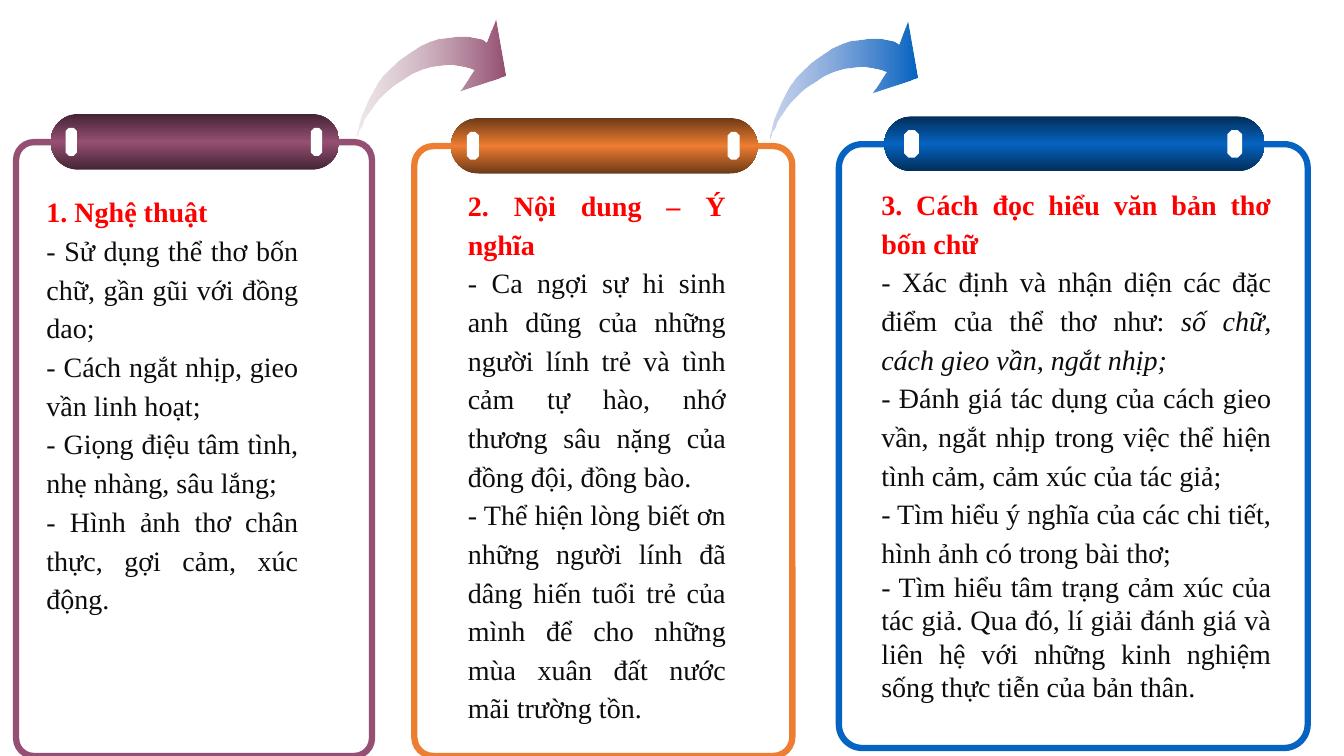
from dataclasses import dataclass

import lxml.etree
import pptx
import pptx.dml.color
import pptx.enum.shapes
import pptx.enum.text
import pptx.oxml.ns
import pptx.util

SHAPE = pptx.enum.shapes.MSO_SHAPE
qn = pptx.oxml.ns.qn


@dataclass(frozen=True)
class Theme:
    font: str = "Times New Roman"
    size: float = 20
    frame_width: float = 4.5
    heading: str = "FF0000"
    body: str = "0D0D0D"
    pin: str = "FFFFFF"
    plum: str = "954F72"
    plum_dark: str = "442434"
    plum_pale: str = "CBB6BF"
    orange: str = "ED7D31"
    orange_dark: str = "6D3A17"
    blue: str = "0563C1"
    blue_dark: str = "022E59"
    blue_pale: str = "5A7DC8"


THEME = Theme()

# Boxes are left, top, width, height in percent: panels and arrows of the slide,
# texts of their panel. Text between asterisks is italic.
PANELS = [
    dict(box=(1.2, 18.8, 26.48, 81.2), color=THEME.plum, dark=THEME.plum_dark,
         holder=1, text_box=(5.67, 6.9, 81.3, 71.59), right=0.27, before=0.1,
         loose=5, lines=[
             "1. Nghệ thuật",
             "- Sử dụng thể thơ bốn chữ, gần gũi với đồng dao;",
             "- Cách ngắt nhịp, gieo vần linh hoạt;",
             "- Giọng điệu tâm tình, nhẹ nhàng, sâu lắng;",
             "- Hình ảnh thơ chân thực, gợi cảm, xúc động."]),
    dict(box=(30.83, 19.33, 28.13, 80.67), color=THEME.orange, dark=THEME.orange_dark,
         holder=2, text_box=(11.47, 5.29, 77.87, 91.24), right=0.26, before=0,
         loose=3, lines=[
             "2. Nội dung – Ý nghĩa",
             "- Ca ngợi sự hi sinh anh dũng của những người lính trẻ và tình cảm "
             "tự hào, nhớ thương sâu nặng của đồng đội, đồng bào.",
             "- Thể hiện lòng biết ơn những người lính đã dâng hiến tuổi trẻ của "
             "mình để cho những mùa xuân đất nước mãi trường tồn."]),
    dict(box=(62.42, 19.07, 34.88, 79.87), color=THEME.blue, dark=THEME.blue_dark,
         holder=3, text_box=(6.88, 5.51, 87.53, 88.81), right=0.1, before=0,
         loose=4, lines=[
             "3. Cách đọc hiểu văn bản thơ bốn chữ",
             "- Xác định và nhận diện các đặc điểm của thể thơ như: "
             "*số chữ, cách gieo vần, ngắt nhịp;*",
             "- Đánh giá tác dụng của cách gieo vần, ngắt nhịp trong việc thể hiện "
             "tình cảm, cảm xúc của tác giả;",
             "- Tìm hiểu ý nghĩa của các chi tiết, hình ảnh có trong bài thơ;",
             "- Tìm hiểu tâm trạng cảm xúc của tác giả. Qua đó, lí giải đánh giá và "
             "liên hệ với những kinh nghiệm sống thực tiễn của bản thân."]),
]

ARROWS = [
    dict(box=(57.31, 2.8, 11.03, 15.47), pale=THEME.blue_pale, color=THEME.blue),
    dict(box=(26.63, 2.53, 11.03, 15.47), pale=THEME.plum_pale, color=THEME.plum),
]

# Arrow outline on a grid of 147 columns and 116 rows
ARROW_GRID = (147, 116)
ARROW_POINTS = [
    (0, 116), (1, 113), (2, 109), (5, 105), (7, 99), (11, 93), (16, 86), (21, 79),
    (28, 72), (35, 66), (44, 60), (54, 54), (63, 50), (73, 47), (81, 46), (88, 45),
    (95, 45), (101, 46), (106, 47), (110, 48), (115, 50), (101, 71), (146, 56),
    (136, 0), (127, 23), (123, 20), (119, 19), (114, 18), (109, 17), (103, 17),
    (96, 17), (89, 18), (80, 19), (72, 22), (63, 26), (53, 32), (43, 39), (34, 47),
    (26, 55), (20, 63), (15, 72), (11, 80), (7, 89), (4, 96), (2, 103), (1, 108),
    (0, 112)]


def rgb(color):
    return pptx.dml.color.RGBColor.from_string(color)


def inside(outer, percent):
    """Return the box that lies at the given percentages of an outer box."""
    x, y, w, h = outer
    px, py, pw, ph = (v / 100 for v in percent)
    return tuple(round(v) for v in (x + px * w, y + py * h, pw * w, ph * h))


def gradient(sp, angle, stops):
    """Fill with stops of position, colour and opacity, all in percent."""
    sp.fill.gradient()
    sp.fill.gradient_angle = angle
    gs_list = sp._element.spPr.find(".//" + qn("a:gsLst"))
    for gs in list(gs_list):
        gs_list.remove(gs)
    for position, color, opacity in stops:
        gs = lxml.etree.SubElement(gs_list, qn("a:gs"), pos=str(position * 1000))
        clr = lxml.etree.SubElement(gs, qn("a:srgbClr"), val=color)
        if opacity < 100:
            lxml.etree.SubElement(clr, qn("a:alpha"), val=str(opacity * 1000))


def add_plain_shape(slide, kind, box, adjustment):
    sp = slide.shapes.add_shape(kind, *box)
    sp.shadow.inherit = False
    sp.adjustments[0] = adjustment
    sp.line.fill.background()
    return sp


def add_arrow(slide, box, pale, color):
    x, y, w, h = box
    columns, rows = ARROW_GRID
    builder = slide.shapes.build_freeform(*ARROW_POINTS[0], scale=(w / columns, h / rows))
    builder.add_line_segments(ARROW_POINTS[1:], close=True)
    sp = builder.convert_to_shape(x, y)
    sp.shadow.inherit = False
    sp.line.fill.background()
    gradient(sp, 0, [(0, pale, 32), (100, color, 100)])


def add_frame(slide, box, color, dark):
    """Draw a rounded frame, the bar across its top edge and the bar's two pins."""
    frame = add_plain_shape(slide, SHAPE.ROUNDED_RECTANGLE, box, 0.05)
    frame.fill.background()
    frame.line.color.rgb = rgb(color)
    frame.line.width = pptx.util.Pt(THEME.frame_width)

    bar_box = inside(box, (9.7, -4.6, 81.1, 9.1))
    bar = add_plain_shape(slide, SHAPE.ROUNDED_RECTANGLE, bar_box, 0.5)
    gradient(bar, 90, [(0, dark, 100), (50, color, 100), (100, dark, 100)])

    for left in (5.2, 90.2):
        pin_box = inside(bar_box, (left, 25, 3.9, 50))
        pin = add_plain_shape(slide, SHAPE.OCTAGON, pin_box, 0.29)
        pin.fill.solid()
        pin.fill.fore_color.rgb = rgb(THEME.pin)


def format_paragraph(p, heading, spacing, before):
    p.alignment = pptx.enum.text.PP_ALIGN.JUSTIFY
    p.line_spacing = spacing
    p.space_before = pptx.util.Pt(before)
    p.space_after = pptx.util.Pt(0)
    pPr = p._p.get_or_add_pPr()
    pPr.set("marL", "0")
    pPr.set("indent", "0")
    lxml.etree.SubElement(pPr, qn("a:buNone"))
    for r in p.runs:
        r.font.name = THEME.font
        r.font.size = pptx.util.Pt(THEME.size)
        r.font.bold = heading
        r.font.color.rgb = rgb(THEME.heading if heading else THEME.body)


def fill_text(sp, box, lines, loose, right, before):
    """Set a heading and its points; the first `loose` lines are spaced wider."""
    sp.left, sp.top, sp.width, sp.height = box
    tf = sp.text_frame
    tf.word_wrap = True
    tf.auto_size = pptx.enum.text.MSO_AUTO_SIZE.SHAPE_TO_FIT_TEXT
    tf.vertical_anchor = pptx.enum.text.MSO_ANCHOR.TOP
    tf.margin_left = pptx.util.Inches(0.1)
    tf.margin_right = pptx.util.Inches(right)
    tf.margin_top = tf.margin_bottom = pptx.util.Inches(0.05)
    tf.text = "\n".join(lines)
    for i, p in enumerate(tf.paragraphs):
        plain, *italic = p.text.rstrip("*").split("*")
        p.text = plain
        for part in italic:
            r = p.add_run()
            r.text = part
            r.font.italic = True
        format_paragraph(p, i == 0, 1.15 if i < loose else 1.0, before)


def add_panel(slide, box, panel):
    add_frame(slide, box, panel["color"], panel["dark"])
    holder = next(sp for sp in slide.placeholders
                  if sp.placeholder_format.idx == panel["holder"])
    fill_text(holder, inside(box, panel["text_box"]), panel["lines"],
              panel["loose"], panel["right"], panel["before"])


def main():
    prs = pptx.Presentation()
    prs.slide_width = pptx.util.Inches(13.33)
    prs.slide_height = pptx.util.Inches(7.5)
    page = (0, 0, prs.slide_width, prs.slide_height)
    slide = prs.slides.add_slide(prs.slide_layouts.get_by_name("Comparison"))
    for arrow in ARROWS:
        add_arrow(slide, inside(page, arrow["box"]), arrow["pale"], arrow["color"])
    for panel in PANELS:
        add_panel(slide, inside(page, panel["box"]), panel)
    for sp in list(slide.placeholders):
        if not sp.text_frame.text:
            sp._element.getparent().remove(sp._element)
    prs.save("out.pptx")


if __name__ == "__main__":
    main()
